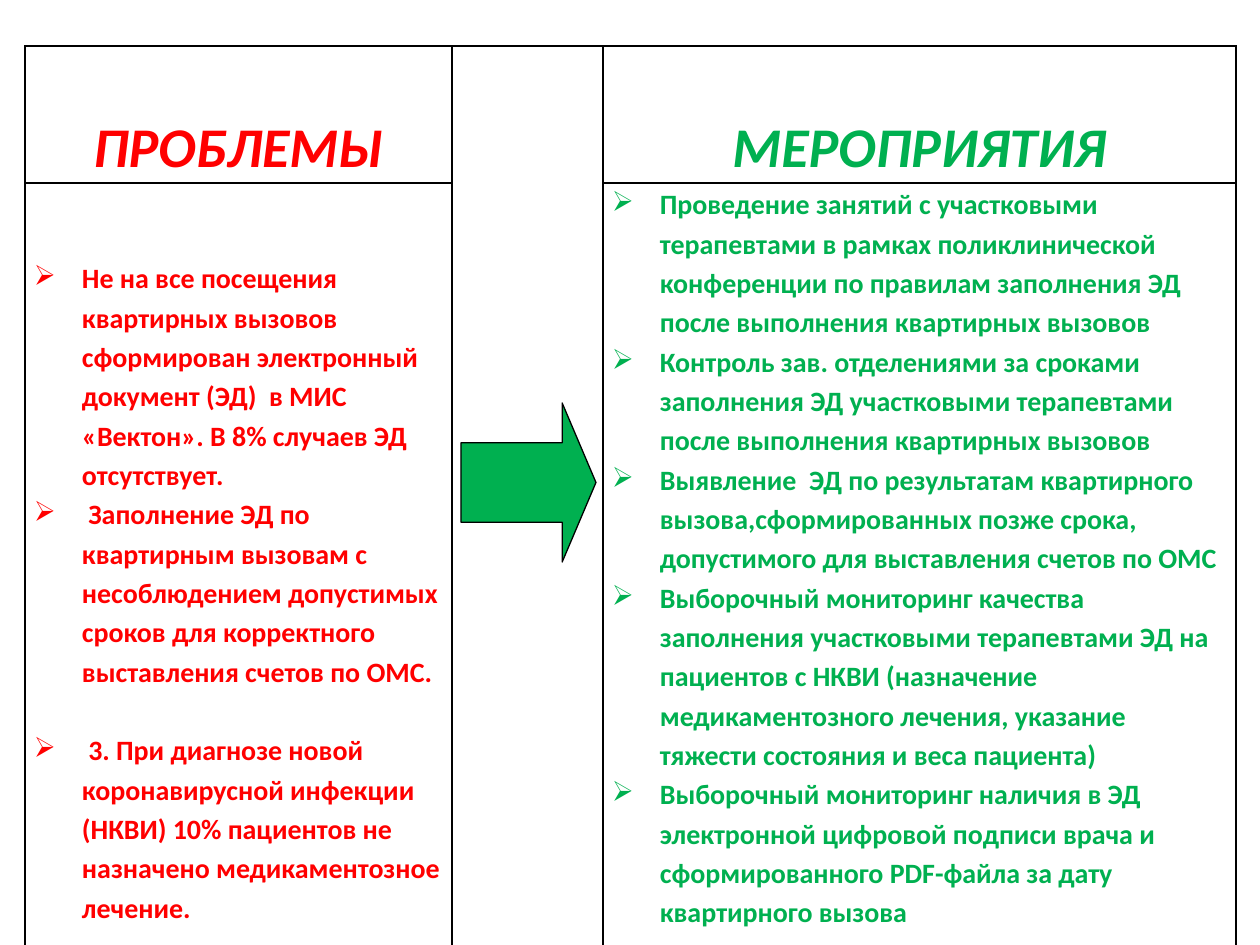
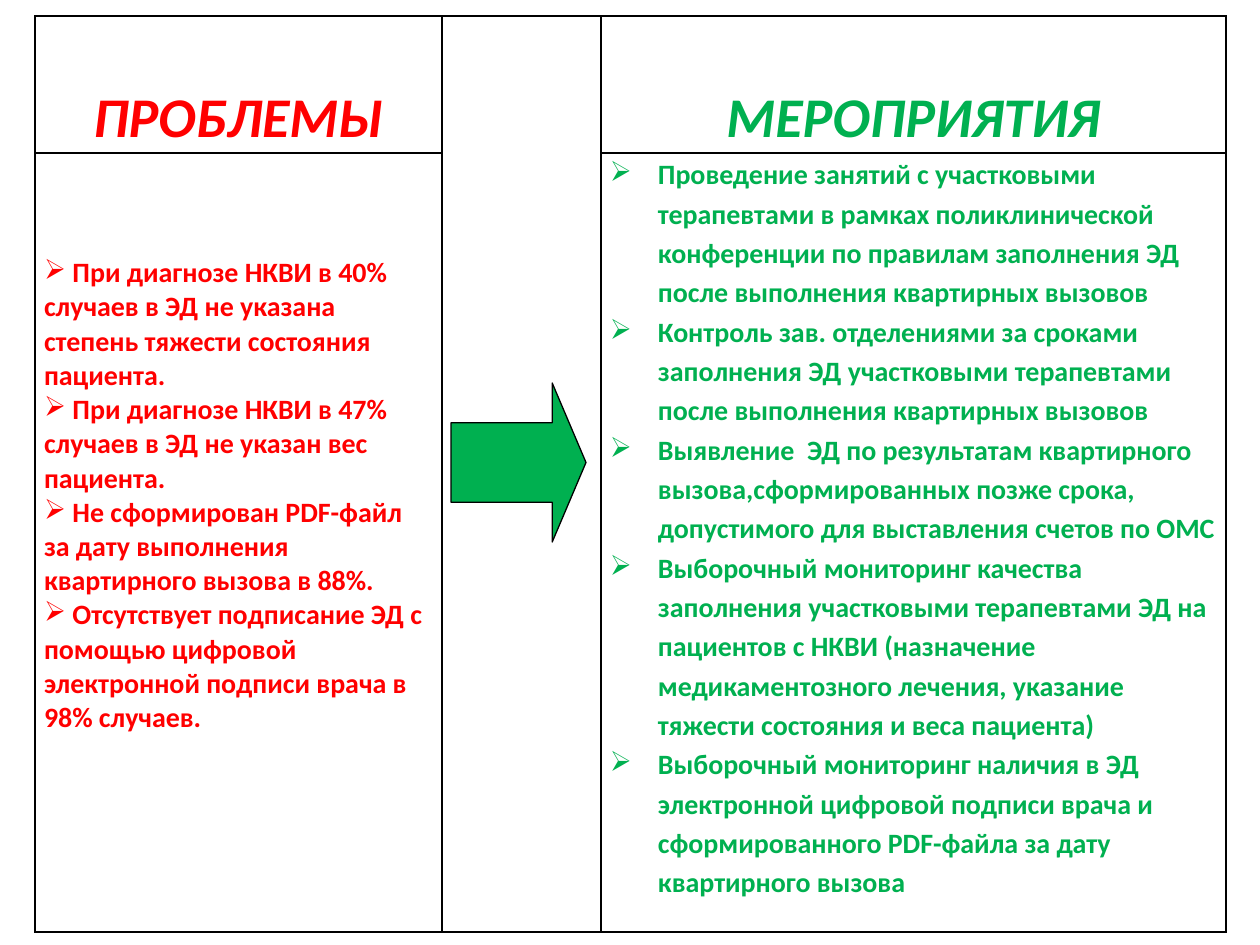
from lxml.etree import SubElement
from pptx import Presentation
from pptx.dml.color import RGBColor
from pptx.enum.shapes import MSO_SHAPE
from pptx.enum.text import MSO_ANCHOR, PP_ALIGN
from pptx.oxml.ns import qn
from pptx.util import Emu, Pt

RED = RGBColor(0xFF, 0x00, 0x00)
GREEN = RGBColor(0x00, 0xB0, 0x50)
BLACK = RGBColor(0x00, 0x00, 0x00)
HEAD = {"size": Pt(32), "bold": True, "italic": True, "name": "Calibri"}
BODY = {"size": Pt(16), "bold": True, "italic": False, "name": "Calibri"}
INDENT = 48
ARROW = (135, 159)

TASKS = [
    "Проведение занятий с участковыми терапевтами в рамках поликлинической конференции по правилам заполнения ЭД после выполнения квартирных вызовов",
    "Контроль зав. отделениями за сроками заполнения ЭД участковыми терапевтами после выполнения квартирных вызовов",
    "Выявление  ЭД по результатам квартирного вызова,сформированных позже срока, допустимого для выставления счетов по ОМС",
    "Выборочный мониторинг качества заполнения участковыми терапевтами ЭД на пациентов с НКВИ (назначение медикаментозного лечения, указание тяжести состояния и веса пациента)",
    "Выборочный мониторинг наличия в ЭД электронной цифровой подписи врача и сформированного PDF-файла за дату квартирного вызова",
]

PAGES = [
    {
        "at": (25, 46), "cols": (427, 151, 633), "rows": (110, 790),
        "arrow": (461, 403), "top": 74, "indent": INDENT, "lines": 1.15,
        "gaps": {2: Pt(22.5)},
        "issues": [
            "Не на все посещения квартирных вызовов  сформирован электронный документ (ЭД)  в МИС «Вектон». В 8% случаев ЭД отсутствует.",
            " Заполнение ЭД по квартирным вызовам с несоблюдением допустимых сроков для корректного  выставления счетов по ОМС.",
            " 3. При диагнозе новой коронавирусной инфекции (НКВИ) 10% пациентов не назначено медикаментозное лечение.",
        ],
    },
    {
        "at": (35, 16), "cols": (407, 159, 625), "rows": (118, 779),
        "arrow": (451, 383), "top": 103, "indent": 0, "lines": 1.0,
        "gaps": {},
        "issues": [
            " При диагнозе НКВИ в 40% случаев в ЭД не указана степень тяжести состояния пациента.",
            " При диагнозе НКВИ в 47% случаев в ЭД не указан вес пациента.",
            " Не сформирован PDF-файл за дату выполнения квартирного вызова в 88%.",
            " Отсутствует подписание ЭД с помощью цифровой электронной подписи врача в 98% случаев.",
        ],
    },
]


def px(count):
    return Emu(round(count * 914400 / 126))


def write(cell, texts, style, color, lines, indent=None, gaps={}):
    frame = cell.text_frame
    for num, text in enumerate(texts):
        para = frame.add_paragraph() if num else frame.paragraphs[0]
        para.line_spacing = lines
        if num in gaps:
            para.space_before = gaps[num]
        run = para.add_run()
        run.text = text
        for key, value in style.items():
            setattr(run.font, key, value)
        run.font.color.rgb = color
        if indent is None:
            para.alignment = PP_ALIGN.CENTER
        else:
            props = para._p.get_or_add_pPr()
            props.set("marL", str(px(indent)))
            props.set("indent", str(-px(indent)))
            SubElement(props, qn("a:buChar")).set("char", "➢")


deck = Presentation()
deck.slide_width = px(1260)
deck.slide_height = px(945)

for page in PAGES:
    slide = deck.slides.add_slide(deck.slide_layouts[6])
    box = [*page["at"], sum(page["cols"]), sum(page["rows"])]
    table = slide.shapes.add_table(2, 3, *map(px, box)).table
    table.first_row = table.horz_banding = False
    for col, width in zip(table.columns, page["cols"]):
        col.width = px(width)
    for row, height in zip(table.rows, page["rows"]):
        row.height = px(height)

    for cell in table.iter_cells():
        cell.margin_left = cell.margin_right = px(9)
        cell.margin_top = cell.margin_bottom = 0
        props = cell._tc.get_or_add_tcPr()
        for side in ("a:lnL", "a:lnR", "a:lnT", "a:lnB"):
            line = SubElement(props, qn(side), w=str(Pt(1)))
            fill = SubElement(line, qn("a:solidFill"))
            SubElement(fill, qn("a:srgbClr"), val=str(BLACK))
        cell.fill.background()
    table.cell(0, 1).merge(table.cell(1, 1))

    for col, title, color in ((0, "ПРОБЛЕМЫ", RED), (2, "МЕРОПРИЯТИЯ", GREEN)):
        head = table.cell(0, col)
        head.vertical_anchor = MSO_ANCHOR.MIDDLE
        write(head, [title], HEAD, color, 2.0)

    left = table.cell(1, 0)
    left.margin_top = px(page["top"])
    write(left, page["issues"], BODY, RED, page["lines"], page["indent"], page["gaps"])
    write(table.cell(1, 2), TASKS, BODY, GREEN, 1.15, INDENT)

    arrow = slide.shapes.add_shape(MSO_SHAPE.RIGHT_ARROW, *map(px, page["arrow"] + ARROW))
    arrow.adjustments[0] = 0.5
    arrow.adjustments[1] = 0.25
    arrow.shadow.inherit = False
    arrow.fill.solid()
    arrow.fill.fore_color.rgb = GREEN
    arrow.line.color.rgb = BLACK
    arrow.line.width = Pt(0.75)

deck.save("out.pptx")
